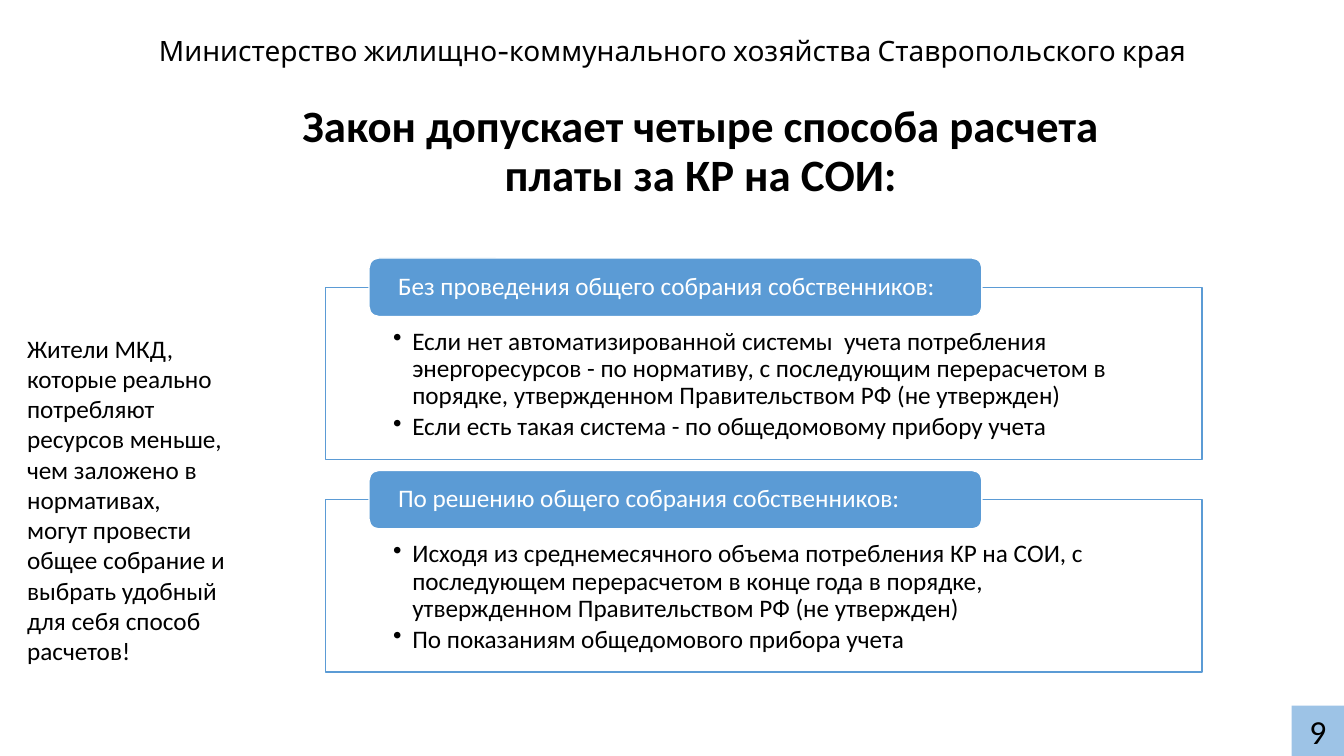
from dataclasses import dataclass

from lxml import etree
from pptx import Presentation
from pptx import util as u
from pptx.dml.color import RGBColor
from pptx.enum import shapes, text
from pptx.oxml.ns import qn


@dataclass
class Theme:
    ink: str = "000000"
    paper: str = "FFFFFF"
    accent: str = "5B9BD5"
    pale: str = "9DC3E6"
    face: str = "Calibri"
    header_face: str = "Cabin"
    title: int = 32
    number: int = 24
    header: int = 20
    body: int = 18


theme = Theme()
prs = Presentation()
prs.slide_width, prs.slide_height = u.Inches(13.33), u.Inches(7.5)
slide = prs.slides.add_slide(prs.slide_layouts[6])
column, row = prs.slide_width / 100, prs.slide_height / 100


def block(left, top, width, height, kind=None, fill=None, line=None):
    area = [round(v) for v in (left * column, top * row, width * column, height * row)]
    if kind is None:
        return slide.shapes.add_textbox(*area)
    shape = slide.shapes.add_shape(kind, *area)
    shape.shadow.inherit = False
    shape.fill.solid()
    shape.fill.fore_color.rgb = RGBColor.from_string(fill)
    if line:
        shape.line.color.rgb = RGBColor.from_string(line)
        shape.line.width = u.Pt(1)
    else:
        shape.line.fill.background()
    return shape


def write(shape, lines, size, color=theme.ink, face=theme.face, bold=False,
          align=text.PP_ALIGN.LEFT, anchor=text.MSO_ANCHOR.MIDDLE,
          spacing=0.9, after=0, insets=(0.1, 0.05), bullets=False):
    frame = shape.text_frame
    frame.word_wrap = True
    frame.vertical_anchor = anchor
    frame.margin_left = frame.margin_right = u.Inches(insets[0])
    frame.margin_top = u.Inches(insets[1])
    frame.text = "\n".join(lines)
    for paragraph in frame.paragraphs:
        paragraph.alignment = align
        paragraph.line_spacing = spacing
        paragraph.space_after = u.Pt(after)
        if bullets:
            paragraph.level = 1
            props = paragraph._p.get_or_add_pPr()
            props.set("marL", str(u.Inches(0.19)))
            props.set("indent", str(-u.Inches(0.19)))
            etree.SubElement(props, qn("a:buChar")).set("char", "•")
        paragraph.font.size = u.Pt(size)
        paragraph.font.name = face
        paragraph.font.bold = bold
        paragraph.font.color.rgb = RGBColor.from_string(color)


center = text.PP_ALIGN.CENTER
top_anchor = text.MSO_ANCHOR.TOP
rect = shapes.MSO_SHAPE.RECTANGLE
rounded = shapes.MSO_SHAPE.ROUNDED_RECTANGLE

write(block(6.9, 4, 86.25, 5.87),
      ["Министерство жилищно-коммунального хозяйства Ставропольского края"],
      theme.header, face=theme.header_face, align=center)
write(block(14.5, 14.4, 76.05, 11.6),
      ["Закон допускает четыре способа расчета \vплаты за КР на СОИ: "],
      theme.title, bold=True, align=center)

methods = [
    ("Без проведения общего собрания собственников:", [
        "Если нет автоматизированной системы  учета потребления энергоресурсов - по нормативу, "
        "с последующим перерасчетом в порядке, утвержденном Правительством РФ (не утвержден)",
        "Если есть такая система - по общедомовому прибору учета"]),
    ("По решению общего собрания собственников:", [
        "Исходя из среднемесячного объема потребления КР на СОИ, с последующем перерасчетом "
        "в конце года в порядке, утвержденном Правительством РФ (не утвержден)",
        "По показаниям общедомового прибора учета"]),
]
for index, (heading, options) in enumerate(methods):
    offset = index * 28.1
    panel = block(24.23, 38 + offset, 65.2, 22.8, rect, theme.paper, theme.accent)
    write(panel, options, theme.body, anchor=top_anchor, after=2.7,
          insets=(0.67, 0.41), bullets=True)
    label = block(27.46, 34.13 + offset, 45.6, 7.73, rounded, theme.accent, theme.paper)
    write(label, [heading], theme.body, color=theme.paper, insets=(0.26, 0.05))

write(block(1.28, 43.4, 16.28, 48.5),
      ["Жители МКД, которые реально потребляют ресурсов меньше, чем заложено в нормативах, "
       "могут провести общее собрание и выбрать удобный для себя способ расчетов!"],
      theme.body, anchor=top_anchor, spacing=1.0)
write(block(96.1, 93.33, 3.9, 6.67, rect, theme.pale), ["9"],
      theme.number, align=center, spacing=1.0)

prs.save("out.pptx")
